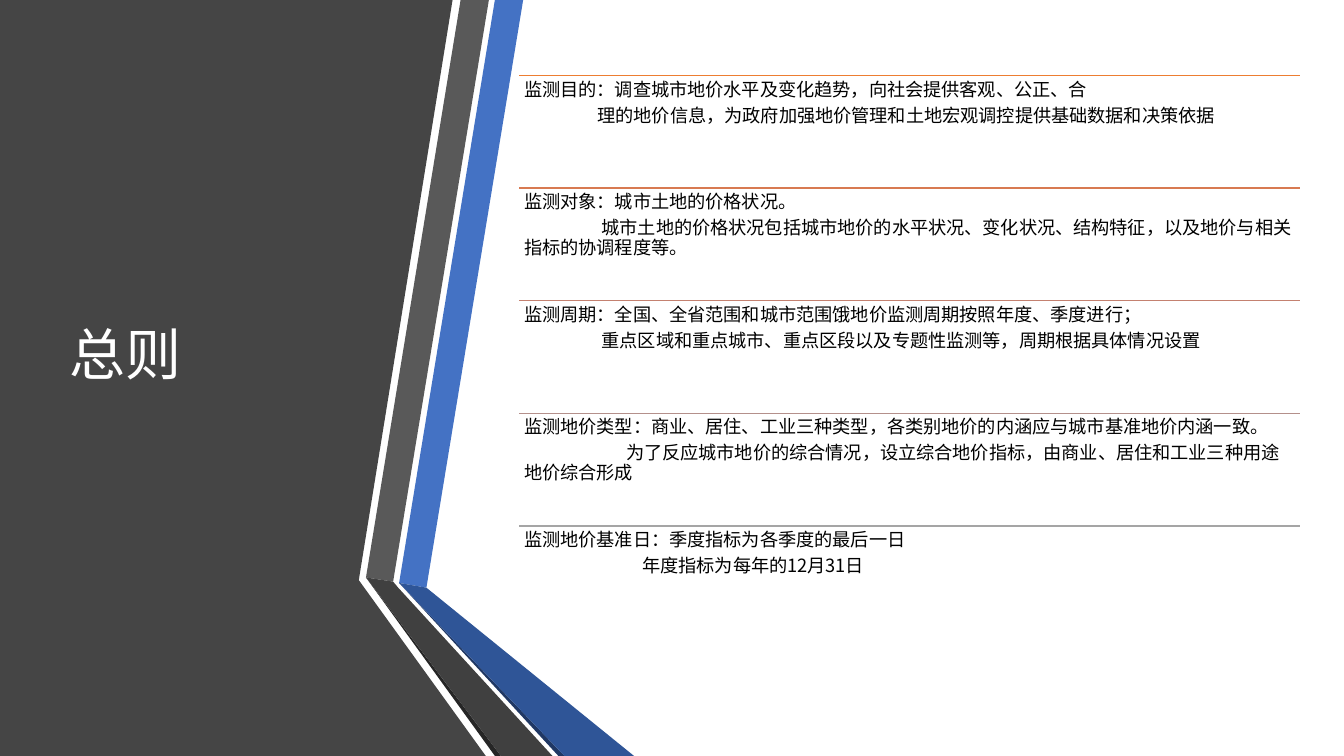
from dataclasses import dataclass

from lxml import etree
from pptx import Presentation
from pptx import util as u
from pptx.dml.color import RGBColor
from pptx.enum import shapes, text
from pptx.oxml.ns import qn


@dataclass(frozen=True)
class Theme:
    font: str = "Noto Sans CJK SC"
    title_size: float = 40
    body_size: float = 13
    title: str = "FFFFFF"
    body: str = "000000"
    panel: str = "454545"
    blue: str = "4472C4"
    blue_fold: str = "2F5597"
    blue_edge: str = "203864"
    grey: str = "595959"
    grey_fold: str = "404040"
    grey_edge: str = "262626"
    rules: tuple = ("ED7D31", "D87A51", "C48170", "B4908B", "A5A5A5")


THEME = Theme()
W, H = 960, 540

# First line, second line, and the second line's indent in points
SECTIONS = [
    ("监测目的：调查城市地价水平及变化趋势，向社会提供客观、公正、合",
     "理的地价信息，为政府加强地价管理和土地宏观调控提供基础数据和决策依据", 52.4),
    ("监测对象：城市土地的价格状况。",
     "城市土地的价格状况包括城市地价的水平状况、变化状况、结构特征，"
     "以及地价与相关指标的协调程度等。", 55.3),
    ("监测周期：全国、全省范围和城市范围饿地价监测周期按照年度、季度进行；",
     "重点区域和重点城市、重点区段以及专题性监测等，周期根据具体情况设置", 55.3),
    ("监测地价类型：商业、居住、工业三种类型，各类别地价的内涵应与城市基准地价内涵一致。",
     "为了反应城市地价的综合情况，设立综合地价指标，"
     "由商业、居住和工业三种用途地价综合形成", 72.8),
    ("监测地价基准日：季度指标为各季度的最后一日",
     "年度指标为每年的12月31日", 84.4),
]


def set_attrs(obj, values):
    for name, value in values.items():
        setattr(obj, name, value)


def add_polygon(s, points, color):
    pts = [(u.Pt(x), u.Pt(y)) for x, y in points]
    builder = s.shapes.build_freeform(*pts[0], scale=1.0)
    builder.add_line_segments(pts[1:], close=True)
    sp = builder.convert_to_shape()
    sp.shadow.inherit = False
    sp.fill.solid()
    sp.fill.fore_color.rgb = RGBColor.from_string(color)
    sp.line.fill.background()


def add_rule(s, x, y, w, color):
    line = s.shapes.add_connector(shapes.MSO_CONNECTOR.STRAIGHT,
                                  u.Pt(x), u.Pt(y), u.Pt(x + w), u.Pt(y))
    line.line.color.rgb = RGBColor.from_string(color)
    line.line.width = u.Pt(1)
    etree.SubElement(line._element.spPr, qn("a:effectLst"))


def add_text(s, box, lines, size, color, frame, space_after=0):
    """Lines are (words, first-line indent) pairs."""
    tf = s.shapes.add_textbox(*map(u.Pt, box)).text_frame
    set_attrs(tf, {"word_wrap": True, **frame})
    for i, (words, indent) in enumerate(lines):
        p = tf.add_paragraph() if i else tf.paragraphs[0]
        set_attrs(p, {"line_spacing": 0.9, "space_after": u.Pt(space_after)})
        if indent:
            pPr = p._p.get_or_add_pPr()
            pPr.set("marL", "0")
            pPr.set("indent", str(u.Pt(indent)))
        r = p.add_run()
        r.text = words
        set_attrs(r.font, {"name": THEME.font, "size": u.Pt(size)})
        r.font.color.rgb = RGBColor.from_string(color)
        ea = etree.SubElement(r._r.get_or_add_rPr(), qn("a:ea"))
        ea.set("typeface", THEME.font)


def add_folded_panel(s, x, y, h):
    """Dark panel with a grey and a blue ribbon, folded near the bottom."""
    grey_l, grey_r = (261.4, 412.5), (280.8, 415.5)
    blue_l, blue_r = (285.1, 416.4), (304.6, 419.8)
    polygons = [
        ([(0, 0), (323.3, 0), (256.3, 414.4), (347, h), (0, h)], THEME.panel),
        ([blue_l, blue_r, (373.7, 0), (353.5, 0)], THEME.blue),
        ([grey_l, grey_r, (349.2, 0), (329, 0)], THEME.grey),
        ([grey_l, (353.5, h), (357.8, h)], THEME.grey_edge),
        ([blue_l, (398.9, h), (403.2, h)], THEME.blue_edge),
        ([blue_l, (403.2, h), (452.9, h), blue_r], THEME.blue_fold),
        ([grey_l, (357.8, h), (394.6, h), (284.4, 419.8), grey_r],
         THEME.grey_fold),
    ]
    for points, color in polygons:
        add_polygon(s, [(x + px, y + py) for px, py in points], color)


def add_title(s, x, y, w, h):
    frame = {"vertical_anchor": text.MSO_ANCHOR.MIDDLE}
    add_text(s, (x, y, w, h), [("总则", 0)], THEME.title_size, THEME.title, frame)


def add_sections(s, x, y, w, h):
    """Equal rows, each a rule above two paragraphs."""
    inset = u.Pt(3.6)
    frame = {f"margin_{side}": inset for side in ("left", "top", "right", "bottom")}
    row_h = h / len(SECTIONS)
    for i, (first, second, indent) in enumerate(SECTIONS):
        top = y + i * row_h
        add_rule(s, x, top, w, THEME.rules[i])
        add_text(s, (x, top, w, row_h), [(first, 0), (second, indent)],
                 THEME.body_size, THEME.body, frame, space_after=4.5)


def main():
    prs = Presentation()
    set_attrs(prs, {"slide_width": u.Pt(W), "slide_height": u.Pt(H)})
    s = prs.slides.add_slide(prs.slide_layouts[6])
    add_folded_panel(s, 0, 0, H)
    add_title(s, 42.5, 54, 219, 402)
    add_sections(s, 370.8, 54, 558, 402)
    prs.save("out.pptx")


if __name__ == "__main__":
    main()
